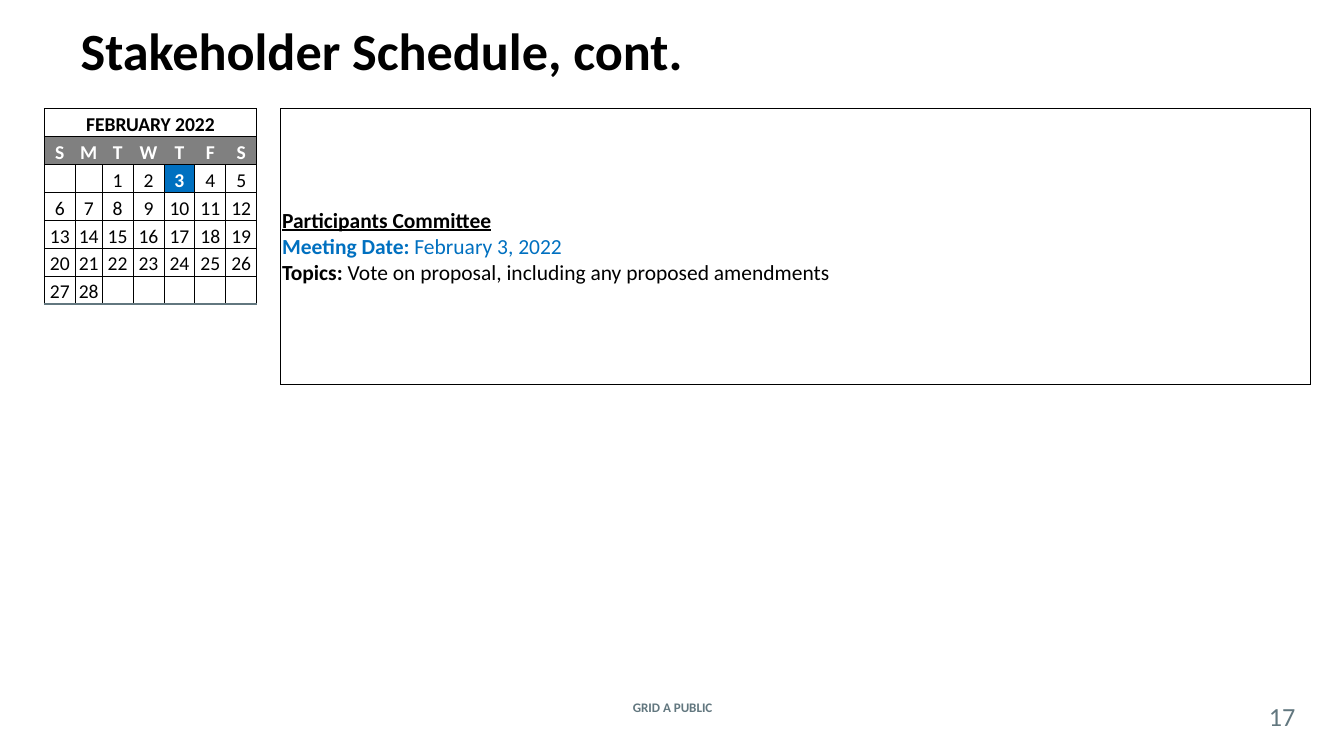
import pptx
import pptx.dml.color
import pptx.enum.text
import pptx.oxml.ns
import pptx.util
from lxml import etree

COLORS = {"black": "000000", "white": "FFFFFF", "gray": "808080",
          "blue": "0070C0", "slate": "62777F"}
FONT = "Calibri"
SLIDE_WIDTH = 10
SLIDE_HEIGHT = SLIDE_WIDTH * 9 / 16
NO_STYLE = "{2D5ABB26-0587-4C30-8999-92F81FD0307C}"
ALIGN = pptx.enum.text.PP_ALIGN
ANCHOR = pptx.enum.text.MSO_ANCHOR

# Calendar columns, then the gap and the details column
COLUMN_WIDTHS = [0.23, 0.2] + [0.23] * 5 + [0.18, 7.66]
DAYS_PER_WEEK, GAP, DETAILS = 7, 7, 8
ROW_COUNT, TABLE_HEIGHT = 8, 1.66
FIRST_WEEK, LAST_WEEK, TAIL = 2, 6, 7
FIRST_DAY_OFFSET, DAYS_IN_MONTH, MEETING_DAY = 2, 28, 3


def rgb(name):
    return pptx.dml.color.RGBColor.from_string(COLORS[name])


def add_run(paragraph, text, size, color="black", bold=False, underline=False):
    run = paragraph.add_run()
    run.text = text
    font = run.font
    font.name, font.size = FONT, pptx.util.Pt(size)
    font.bold, font.underline = bold, underline
    font.color.rgb = rgb(color)


def place(shape, box):
    shape.left, shape.top, shape.width, shape.height = map(pptx.util.Inches, box)


def add_title(slide, box, text):
    title = slide.shapes.title
    place(title, box)
    frame = title.text_frame
    frame.vertical_anchor = ANCHOR.MIDDLE
    frame.auto_size = pptx.enum.text.MSO_AUTO_SIZE.NONE
    paragraph = frame.paragraphs[0]
    paragraph.alignment = ALIGN.LEFT
    add_run(paragraph, text, 28, bold=True)


def add_footer_text(slide, box, text, size, bold=False):
    shape = slide.shapes.add_textbox(*map(pptx.util.Inches, box))
    frame = shape.text_frame
    frame.word_wrap = True
    frame.vertical_anchor = ANCHOR.MIDDLE
    frame.margin_left = frame.margin_right = 0
    frame.margin_top = frame.margin_bottom = 0
    paragraph = frame.paragraphs[0]
    paragraph.alignment = ALIGN.CENTER
    add_run(paragraph, text, size, "slate", bold)


def set_borders(cell, borders):
    """Draw the sides in borders (L, R, T, B -> color, points); clear the rest."""
    properties = cell._tc.get_or_add_tcPr()
    for side in "LRTB":
        line = etree.SubElement(properties, pptx.oxml.ns.qn(f"a:ln{side}"))
        if side not in borders:
            etree.SubElement(line, pptx.oxml.ns.qn("a:noFill"))
            continue
        color, width = borders[side]
        line.set("w", str(pptx.util.Pt(width)))
        fill = etree.SubElement(line, pptx.oxml.ns.qn("a:solidFill"))
        etree.SubElement(fill, pptx.oxml.ns.qn("a:srgbClr"), val=COLORS[color])


def border_rule(row, column):
    thin, accent = ("black", 0.5), ("slate", 1)
    if column == GAP:
        return {"L": thin, "R": thin} if row < TAIL else {"R": thin}
    if column == DETAILS:
        return dict.fromkeys("LRTB", thin)
    if row == TAIL:
        return {"T": accent}
    sides = {"T": thin, "B": accent if row == LAST_WEEK else thin}
    if row != 1 or column == 0:
        sides["L"] = thin
    if row != 1 or column == DAYS_PER_WEEK - 1:
        sides["R"] = thin
    return sides


def format_cell(cell, borders):
    cell.margin_left = cell.margin_right = cell.margin_top = cell.margin_bottom = 0
    cell.vertical_anchor = ANCHOR.BOTTOM
    set_borders(cell, borders)
    cell.fill.background()
    # Keeps empty cells from stretching their row
    end = etree.SubElement(cell.text_frame.paragraphs[0]._p,
                           pptx.oxml.ns.qn("a:endParaRPr"))
    end.set("sz", "1050")


def fill_calendar_cell(cell, text, color="black", bold=False, fill=None):
    paragraph = cell.text_frame.paragraphs[0]
    paragraph.alignment = ALIGN.CENTER
    add_run(paragraph, text, 10.5, color, bold)
    if fill:
        cell.fill.solid()
        cell.fill.fore_color.rgb = rgb(fill)


def fill_calendar(table, month):
    table.cell(0, 0).merge(table.cell(0, DAYS_PER_WEEK - 1))
    fill_calendar_cell(table.cell(0, 0), month, bold=True)
    for column, letter in enumerate("SMTWTFS"):
        fill_calendar_cell(table.cell(1, column), letter, "white", True, "gray")
    for day in range(1, DAYS_IN_MONTH + 1):
        week, column = divmod(day - 1 + FIRST_DAY_OFFSET, DAYS_PER_WEEK)
        style = ("white", True, "blue") if day == MEETING_DAY else ()
        fill_calendar_cell(table.cell(FIRST_WEEK + week, column), str(day), *style)


def fill_details(table, lines):
    cell = table.cell(0, DETAILS)
    cell.merge(table.cell(TAIL, DETAILS))
    cell.vertical_anchor = ANCHOR.MIDDLE
    cell.margin_left = cell.margin_right = cell.margin_top = pptx.util.Inches(0.01)
    paragraph = cell.text_frame.paragraphs[0]
    for index, runs in enumerate(lines):
        if index:
            paragraph.add_line_break()
        for text, style in runs:
            add_run(paragraph, text, 11.5, **style)


def add_schedule(slide, left, top, month, details):
    box = (left, top, sum(COLUMN_WIDTHS), TABLE_HEIGHT)
    frame = slide.shapes.add_table(ROW_COUNT, len(COLUMN_WIDTHS),
                                   *map(pptx.util.Inches, box))
    table = frame.table
    table.first_row = table.horz_banding = False
    table._tbl.tblPr.find(pptx.oxml.ns.qn("a:tableStyleId")).text = NO_STYLE
    for column, width in zip(table.columns, COLUMN_WIDTHS):
        column.width = pptx.util.Inches(width)
    for row in range(ROW_COUNT):
        for column in range(len(COLUMN_WIDTHS)):
            format_cell(table.cell(row, column), border_rule(row, column))
    fill_calendar(table, month)
    fill_details(table, details)


def main():
    presentation = pptx.Presentation()
    presentation.slide_width = pptx.util.Inches(SLIDE_WIDTH)
    presentation.slide_height = pptx.util.Inches(SLIDE_HEIGHT)
    slide = presentation.slides.add_slide(presentation.slide_layouts[5])

    add_title(slide, (0.05 * SLIDE_WIDTH, -0.1, 0.9 * SLIDE_WIDTH, 0.94),
              "Stakeholder Schedule, cont.")
    add_schedule(slide, 0.33, 0.81, "FEBRUARY 2022", [
        [("Participants Committee", {"bold": True, "underline": True})],
        [("Meeting Date: ", {"color": "blue", "bold": True}),
         ("February 3, 2022", {"color": "blue"})],
        [("Topics: ", {"bold": True}),
         ("Vote on proposal, including any proposed amendments", {})],
    ])
    add_footer_text(slide, (4.27, 5.16, 1.47, 0.21), "GRID A PUBLIC", 7, bold=True)
    add_footer_text(slide, (9.33, 5.22, 0.42, 0.22), "17", 14)
    presentation.save("out.pptx")


if __name__ == "__main__":
    main()
